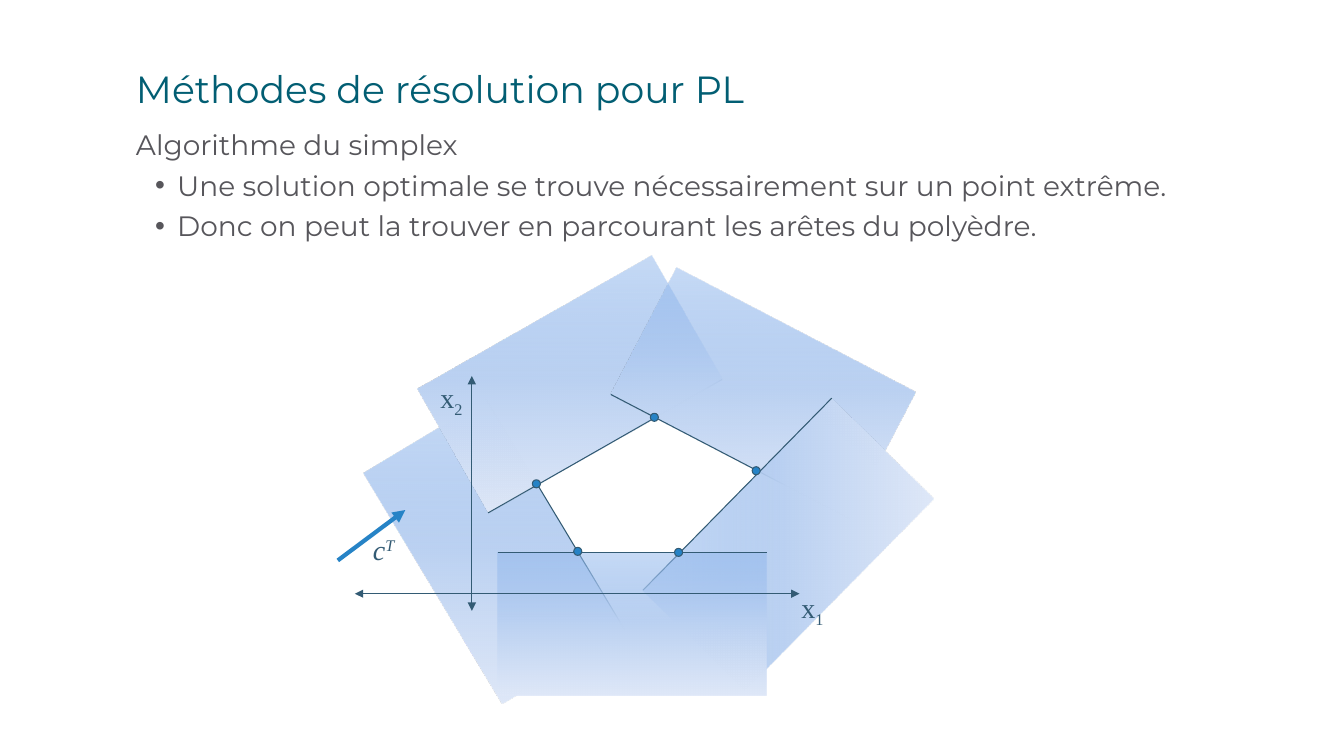
import math

from pptx import Presentation
from pptx import oxml
from pptx import util as u
from pptx.dml import color
from pptx.enum import shapes, text
from pptx.oxml import ns

PX = 9144  # EMU in one px, 100 px to the inch
COLORS = {
    "title": "025E73", "body": "57565B", "ink": "335B74", "accent": "2683C6",
    "deep": "90B7ED", "middle": "BCD2F2", "pale": "DFE8F8",
}
SANS, SERIF = "Montserrat", "Times New Roman"
FACET_WIDTH, FACET_HEIGHT = 267, 142
# centre x, centre y, rotation, gradient angle on the page
FACETS = [
    (490, 547, 59, 90),
    (565, 381, 150.3, 90),
    (757, 390, 207.5, 90),
    (782, 540, 314.5, 0),
    (627, 619, 0, 90),
]
EXTREME_POINTS = [(532, 480), (649, 414), (673, 548), (573, 547), (750, 467)]
DOT = 8


def px(*lengths):
    return [u.Emu(round(length * PX)) for length in lengths]


def rgb(name):
    return color.RGBColor.from_string(COLORS[name])


def xml(tag, content="", **attributes):
    listed = "".join(f' {key}="{value}"' for key, value in attributes.items())
    return oxml.parse_xml(f'<a:{tag} {ns.nsdecls("a")}{listed}>{content}</a:{tag}>')


def add_text(slide, box, paragraphs, *, size, ink, font=SANS, italic=False,
             inset=5, line_spacing=None, space_before=0):
    """Each paragraph is (bulleted, runs); each run is (words, baseline in percent)."""
    frame = slide.shapes.add_textbox(*px(*box)).text_frame
    frame.word_wrap = True
    frame.vertical_anchor = text.MSO_ANCHOR.TOP
    frame.margin_left, frame.margin_right = px(10, 10)
    frame.margin_top, frame.margin_bottom = px(inset, inset)
    for index, (bulleted, runs) in enumerate(paragraphs):
        paragraph = frame.add_paragraph() if index else frame.paragraphs[0]
        if bulleted:
            paragraph.level = 1
            properties = paragraph._p.get_or_add_pPr()
            properties.set("marL", str(41 * PX))
            properties.set("indent", str(-22 * PX))
            properties.append(xml("buFont", typeface="Arial"))
            properties.append(xml("buChar", char="•"))
        if line_spacing:
            paragraph.line_spacing = line_spacing
        if index:
            paragraph.space_before = u.Pt(space_before)
        for words, baseline in runs:
            run = paragraph.add_run()
            run.text = words
            run.font.name, run.font.size = font, u.Pt(size)
            run.font.italic = italic
            run.font.color.rgb = rgb(ink)
            if baseline:
                run._r.get_or_add_rPr().set("baseline", str(baseline * 1000))


def add_line(slide, start, end, ink="ink", width=0.75, head=False, tail=False):
    line = slide.shapes.add_connector(
        shapes.MSO_CONNECTOR.STRAIGHT, *px(*start, *end))
    line.line.color.rgb = rgb(ink)
    line.line.width = u.Pt(width)
    outline = line.line._get_or_add_ln()
    for wanted, tag in ((head, "headEnd"), (tail, "tailEnd")):
        if wanted:
            outline.append(xml(tag, type="triangle"))
    line._element.spPr.append(xml("effectLst"))


def fill_gradient(shape, angle):
    """Fade from half-transparent deep to pale, at an angle fixed to the page."""
    stops = "".join(
        f'<a:gs pos="{position * 1000}"><a:srgbClr val="{COLORS[name]}">'
        f'<a:alpha val="{alpha * 1000}"/></a:srgbClr></a:gs>'
        for position, name, alpha in
        ((0, "deep", 50), (50, "middle", 100), (100, "pale", 100)))
    content = f'<a:gsLst>{stops}</a:gsLst><a:lin ang="{angle * 60000}" scaled="0"/>'
    geometry = shape._element.spPr.find(ns.qn("a:prstGeom"))
    geometry.addnext(xml("gradFill", content, rotWithShape="0"))


def add_facet(slide, x, y, rotation, angle):
    """A shaded half-plane whose top edge, before rotation, is the constraint line."""
    half_width, half_height = FACET_WIDTH / 2, FACET_HEIGHT / 2
    shape = slide.shapes.add_shape(
        shapes.MSO_SHAPE.RECTANGLE,
        *px(x - half_width, y - half_height, FACET_WIDTH, FACET_HEIGHT))
    shape.rotation = rotation
    shape.shadow.inherit = False
    shape.line.fill.background()
    fill_gradient(shape, angle)
    cos, sin = math.cos(math.radians(rotation)), math.sin(math.radians(rotation))
    start, end = [
        (x + side * cos + half_height * sin, y + side * sin - half_height * cos)
        for side in (-half_width, half_width)]
    add_line(slide, start, end)


def add_dot(slide, x, y):
    dot = slide.shapes.add_shape(
        shapes.MSO_SHAPE.OVAL, *px(x - DOT / 2, y - DOT / 2, DOT, DOT))
    dot.shadow.inherit = False
    dot.fill.solid()
    dot.fill.fore_color.rgb = rgb("accent")
    dot.line.color.rgb = rgb("ink")
    dot.line.width = u.Pt(0.75)


def add_symbol(slide, box, letter, index, baseline, italic=False):
    add_text(slide, box, [(False, [(letter, 0), (index, baseline)])],
             size=20, ink="ink", font=SERIF, italic=italic)


def main():
    presentation = Presentation()
    presentation.slide_width, presentation.slide_height = px(1333, 750)
    slide = presentation.slides.add_slide(presentation.slide_layouts[6])

    add_text(slide, (125, 120, 1150, 175), [
        (False, [("Algorithme du simplex", 0)]),
        (True, [("Une solution optimale se trouve nécessairement sur un point extrême.", 0)]),
        (True, [("Donc on peut la trouver en parcourant les arêtes du polyèdre.", 0)]),
    ], size=20, ink="body", inset=10, line_spacing=0.9, space_before=7.5)
    add_text(slide, (125, 65, 1150, 75),
             [(False, [("Méthodes de résolution pour PL", 0)])],
             size=27, ink="title", line_spacing=0.9)

    for facet in FACETS:
        add_facet(slide, *facet)

    add_line(slide, (335, 556), (402, 506), ink="accent", width=3, tail=True)
    add_symbol(slide, (360, 523, 67, 44), "c", "T", 30, italic=True)

    add_line(slide, (468, 373), (468, 606), head=True, tail=True)
    add_line(slide, (352, 589), (793, 589), head=True, tail=True)
    add_symbol(slide, (785, 581, 83, 44), "x", "1", -25)
    add_symbol(slide, (427, 373, 50, 44), "x", "2", -25)

    for point in EXTREME_POINTS:
        add_dot(slide, *point)

    presentation.save("out.pptx")


if __name__ == "__main__":
    main()
